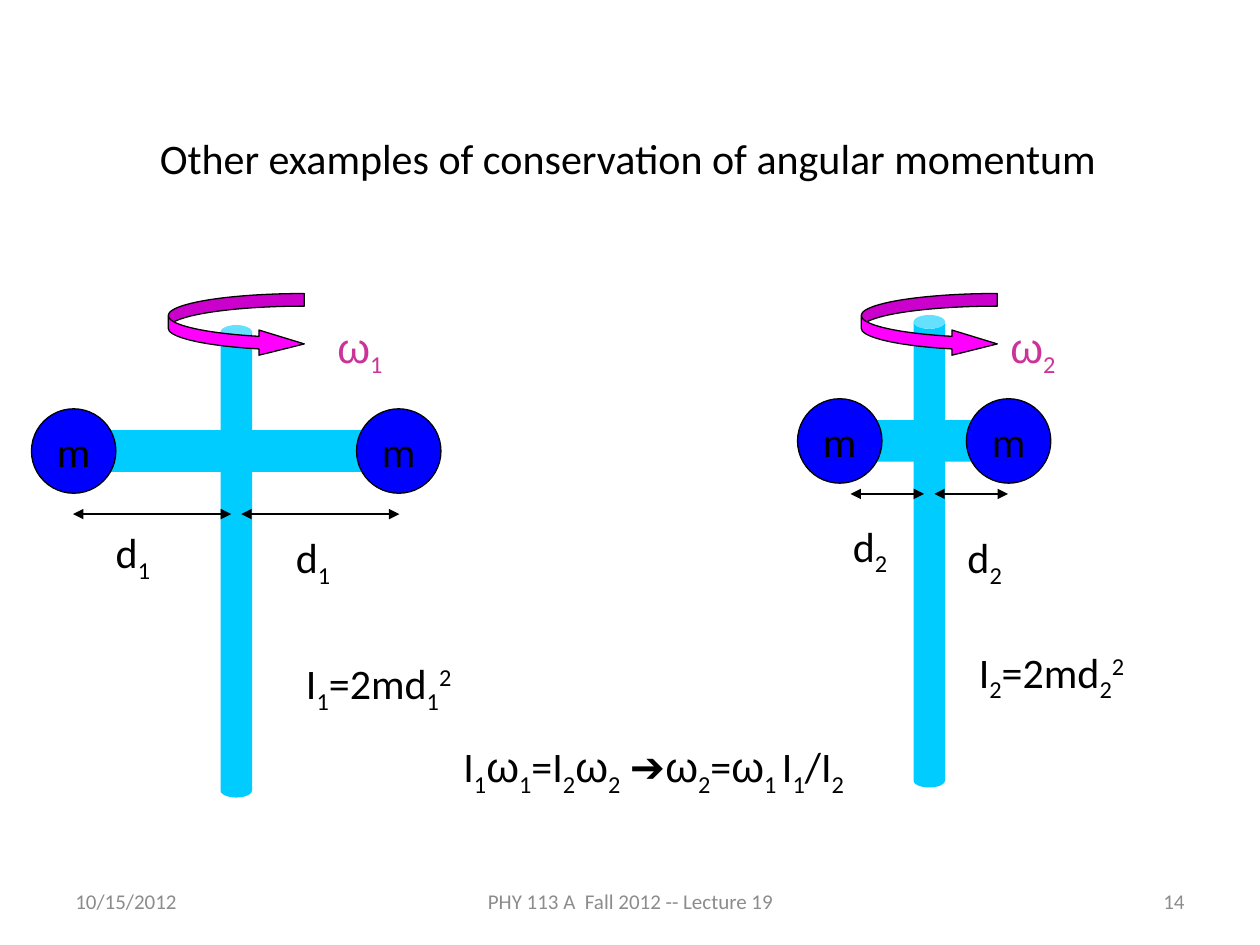
"""Build a slide on conservation of angular momentum with two rotors."""
from dataclasses import dataclass

from lxml.etree import SubElement
from pptx import Presentation
from pptx.dml.color import RGBColor
from pptx.enum.shapes import MSO_CONNECTOR as Link, MSO_SHAPE as Kind
from pptx.enum.text import MSO_ANCHOR as Anchor, MSO_AUTO_SIZE as Fit, PP_ALIGN as Align
from pptx.oxml.ns import qn
from pptx.util import Inches, Pt

BLACK, GRAY, CYAN, BLUE = "000000", "8C8C8C", "00CCFF", "0000FF"
PINK, PLUM = "FF00FF", "CC3399"
ROD, BAR, BALL, TALL = 0.25, 0.33, 0.67, 3.75
SHIFT = {"_": "-25000", "^": "30000"}


@dataclass
class Label:
    text: str
    left: float
    top: float
    width: float
    color: str = BLACK
    wrap: bool = True


@dataclass
class Footer:
    text: str
    left: float
    width: float
    align: Align


@dataclass
class Rotor:
    mid: float
    top: float
    span: float
    bend: float
    balls: tuple[float, float]
    ends: tuple[float, float]
    gauge: float


ROTORS = [
    Rotor(1.875, 2.58, 2.58, 0.71, (0.25, 2.83), (0.58, 3.17), 4.08),
    Rotor(7.375, 2.5, 0.92, 0.25, (6.33, 7.67), (6.75, 8), 3.92),
]
LABELS = [
    Label("Other examples of conservation of angular momentum", 1.17, 1, 8),
    Label("d|_1", 0.82, 4.13, 0.49, wrap=False),
    Label("d|_1", 2.25, 4.17, 0.49, wrap=False),
    Label("d|_2", 6.67, 4.08, 0.49, wrap=False),
    Label("d|_2", 7.58, 4.17, 0.49, wrap=False),
    Label("I|_1|=2md|_1|^2", 2.33, 5.17, 1.75),
    Label("I|_2|=2md|_2|^2", 7.67, 5.08, 1.75),
    Label("I|_1|ω|_1|=I|_2|ω|_2| ➔|ω|_2|=|ω|_1 |I|_1|/I|_2", 3.58, 5.83, 4),
    Label("ω|_1", 2.58, 2.5, 0.67, PLUM),
    Label("ω|_2", 7.92, 2.5, 0.67, PLUM),
]
FOOTERS = [
    Footer("10/15/2012", 0.5, 2.33, Align.LEFT),
    Footer("PHY 113 A  Fall 2012 -- Lecture 19", 3.42, 3.17, Align.CENTER),
    Footer("14", 7.17, 2.33, Align.RIGHT),
]


def paint(color, code: str) -> None:
    """Give a colour format or a solid fill a hex colour."""
    color.rgb = RGBColor.from_string(code)


def style(font, size: float, code: str, name: str = "Calibri") -> None:
    """Set face, size and colour of a font."""
    font.name, font.size = name, Pt(size)
    paint(font.color, code)


def add_box(slide, left: float, top: float, width: float, height: float):
    """Add a text box."""
    return slide.shapes.add_textbox(*map(Inches, (left, top, width, height)))


def add_label(slide, label: Label) -> None:
    """Add a formula label whose pieces may be raised or lowered."""
    frame = add_box(slide, label.left, label.top, label.width, 0.5).text_frame
    frame.word_wrap, frame.auto_size = label.wrap, Fit.SHAPE_TO_FIT_TEXT
    for piece in label.text.split("|"):
        run = frame.paragraphs[0].add_run()
        run.text = piece.lstrip("_^")
        style(run.font, 24, label.color, "Arial" if piece == "ω" else "Calibri")
        if piece[0] in SHIFT:
            run.font._element.set("baseline", SHIFT[piece[0]])


def add_footer(slide, foot: Footer) -> None:
    """Add one gray footer field."""
    frame = add_box(slide, foot.left, 6.95, foot.width, 0.4).text_frame
    frame.word_wrap, frame.vertical_anchor = True, Anchor.MIDDLE
    frame.text = foot.text
    line = frame.paragraphs[0]
    line.alignment = foot.align
    style(line.runs[0].font, 12, GRAY)


def add_form(slide, kind: Kind, left: float, top: float, width: float,
             height: float, fill: str, edge: bool = False,
             bends: tuple[float, ...] = ()):
    """Add a filled preset shape, outlined in black if asked."""
    form = slide.shapes.add_shape(kind, *map(Inches, (left, top, width, height)))
    form.shadow.inherit = False
    form.fill.solid()
    paint(form.fill.fore_color, fill)
    if edge:
        paint(form.line.color, BLACK)
        form.line.width = Pt(0.75)
    else:
        form.line.fill.background()
    for spot, bend in enumerate(bends):
        form.adjustments[spot] = bend
    return form


def add_ball(slide, left: float, top: float) -> None:
    """Add a ball marked with its mass."""
    frame = add_form(slide, Kind.OVAL, left, top, BALL, BALL, BLUE, True).text_frame
    frame.word_wrap, frame.vertical_anchor = False, Anchor.MIDDLE
    frame.text = "m"
    line = frame.paragraphs[0]
    line.alignment = Align.CENTER
    style(line.runs[0].font, 24, BLACK)


def add_gauge(slide, start: float, end: float, level: float) -> None:
    """Add a level line with an arrowhead at both ends."""
    line = slide.shapes.add_connector(
        Link.STRAIGHT, *map(Inches, (start, level, end, level)))
    paint(line.line.color, BLACK)
    line.line.width = Pt(0.75)
    stroke = line.line._get_or_add_ln()
    for tag in ("a:headEnd", "a:tailEnd"):
        SubElement(stroke, qn(tag), type="triangle")
    SubElement(line._element.spPr, qn("a:effectLst"))


def add_rotor(slide, rotor: Rotor) -> None:
    """Add a rod with its crossbar, balls, distances and spin arrow."""
    mid, level = rotor.mid, rotor.top + 1
    add_form(slide, Kind.CAN, mid - ROD / 2, rotor.top, ROD, TALL, CYAN, bends=(0.44,))
    bar = add_form(slide, Kind.CAN, mid - BAR / 2, level - rotor.span / 2,
                   BAR, rotor.span, CYAN, bends=(rotor.bend,))
    bar.rotation = 90
    for left in rotor.balls:
        add_ball(slide, left, level - BALL / 2)
    start, end = rotor.ends
    add_gauge(slide, start, mid - 0.04, rotor.gauge)
    add_gauge(slide, mid + 0.04, end, rotor.gauge)
    add_form(slide, Kind.CURVED_RIGHT_ARROW, mid - 0.54, 2.33, 1.08, 0.5,
             PINK, True, (0.2, 0.4, 0.72))


def main() -> None:
    """Draw and save the slide."""
    deck = Presentation()
    deck.slide_width, deck.slide_height = Inches(10), Inches(7.5)
    slide = deck.slides.add_slide(deck.slide_layouts[6])
    for foot in FOOTERS:
        add_footer(slide, foot)
    for rotor in ROTORS:
        add_rotor(slide, rotor)
    for label in LABELS:
        add_label(slide, label)
    deck.save("out.pptx")


if __name__ == "__main__":
    main()
